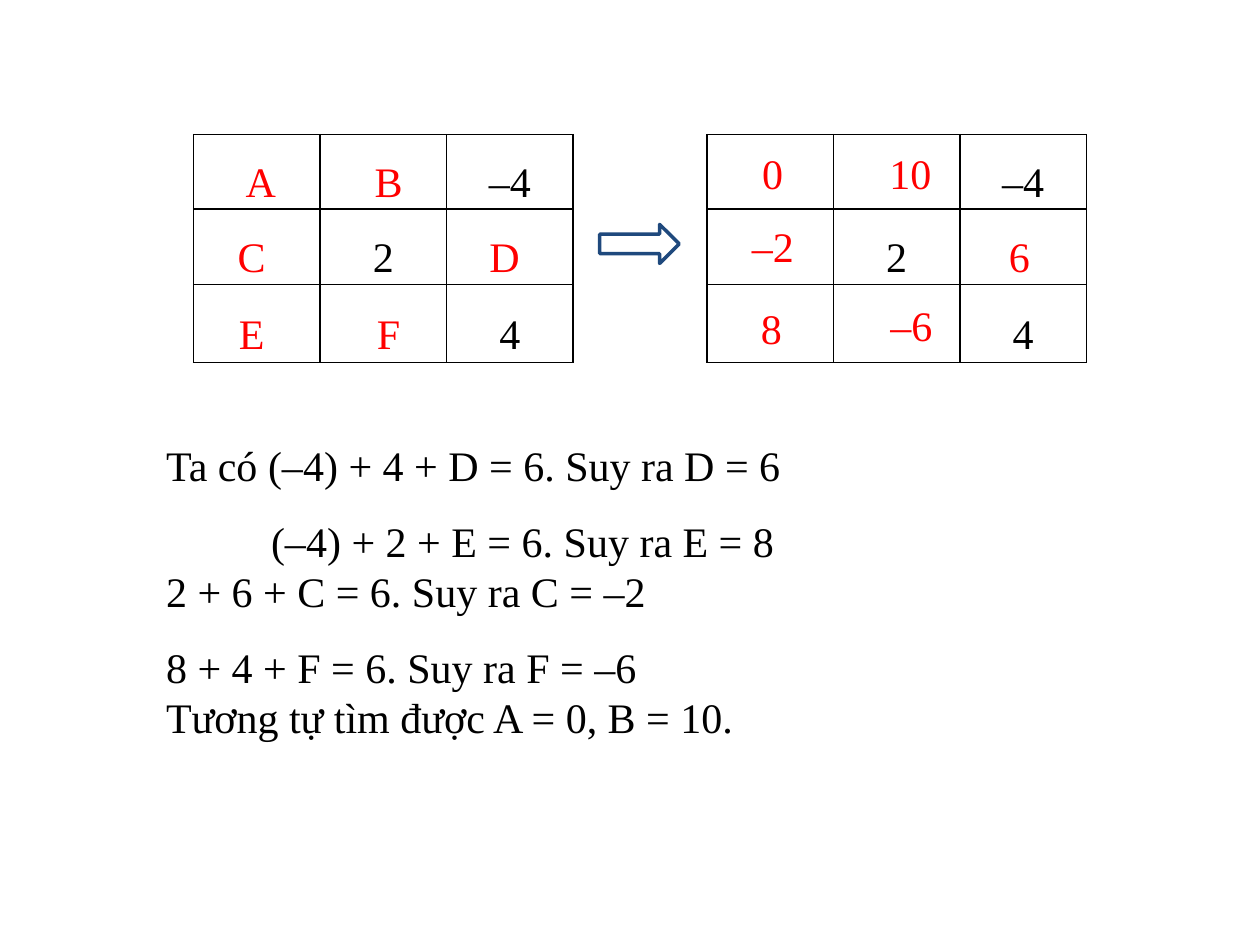
from dataclasses import dataclass
from lxml.etree import SubElement as Sub
from pptx import Presentation
from pptx.dml.color import RGBColor as Rgb
from pptx.enum.shapes import MSO_SHAPE as Shape
from pptx.enum.text import MSO_ANCHOR as Anchor, MSO_AUTO_SIZE as Auto, PP_ALIGN as Align
from pptx.oxml.ns import qn
from pptx.util import Pt


@dataclass
class Theme:
    face: str = "Times New Roman"
    size: float = 24
    ink: str = "000000"
    red: str = "FF0000"
    blue: str = "1F497D"


theme = Theme()


def style(par, text, color):
    par.text = text
    par.font.name = theme.face
    par.font.size = Pt(theme.size)
    par.font.color.rgb = Rgb.from_string(color)


def add_box(left, top, wide, high):
    box = slide.shapes.add_textbox(Pt(left), Pt(top), Pt(wide), Pt(high))
    box.text_frame.word_wrap = False
    box.text_frame.auto_size = Auto.SHAPE_TO_FIT_TEXT
    return box.text_frame


deck = Presentation()
deck.slide_width, deck.slide_height = Pt(720), Pt(540)
slide = deck.slides.add_slide(deck.slide_layouts[6])

grids = [
    (110.6, [[" A", " B", "–4"], ["C ", "2", "D "], ["E ", " F", "4"]]),
    (403.9, [["", "", "–4"], ["", "2", ""], ["", "", "4"]]),
]
highs = [42.5, 43.2, 44.6]
wide = 72.3
for left, rows in grids:
    frame = slide.shapes.add_table(3, 3, Pt(left), Pt(77), Pt(3 * wide), Pt(sum(highs)))
    table = frame.table
    table.first_row = table.horz_banding = False
    for col in table.columns:
        col.width = Pt(wide)
    for r, row in enumerate(rows):
        table.rows[r].height = Pt(highs[r])
        for c, text in enumerate(row):
            cell = table.cell(r, c)
            cell.margin_left = cell.margin_right = Pt(5)
            cell.margin_top = cell.margin_bottom = 0
            cell.vertical_anchor = Anchor.MIDDLE
            par = cell.text_frame.paragraphs[0]
            par.alignment = Align.CENTER
            par.line_spacing = 1.5
            style(par, text, theme.red if text.strip().isalpha() else theme.ink)
            props = cell._tc.get_or_add_tcPr()
            for side in ("a:lnL", "a:lnR", "a:lnT", "a:lnB"):
                line = Sub(props, qn(side), w=str(Pt(1)))
                Sub(Sub(line, qn("a:solidFill")), qn("a:srgbClr"), val=theme.ink)
            cell.fill.background()

arrow = slide.shapes.add_shape(Shape.RIGHT_ARROW, Pt(342.7), Pt(128.2), Pt(45.4), Pt(22.3))
arrow.shadow.inherit = False
arrow.fill.background()
arrow.line.color.rgb = Rgb.from_string(theme.blue)
arrow.line.width = Pt(2)

steps = [
    ("Ta có (–4) + 4 + D = 6. Suy ra D = 6", 1, 0),
    ("(–4) + 2 + E = 6. Suy ra E = 8", 1.5, 60),
    ("2 + 6 + C = 6. Suy ra C = –2", 1, 0),
    ("8 + 4 + F = 6. Suy ra F = –6", 1.5, 0),
    ("Tương tự tìm được A = 0, B = 10.", 1, 0),
]
proof = add_box(87.8, 247.7, 368.6, 211)
for i, (text, space, indent) in enumerate(steps):
    par = proof.add_paragraph() if i else proof.paragraphs[0]
    style(par, text, theme.ink)
    par.line_spacing = space
    if indent:
        par._p.get_or_add_pPr().set("marL", str(Pt(indent)))
proof.paragraphs[-1].alignment = Align.JUSTIFY

finds = [
    ("6", 569.5, 128.2),
    ("–6", 501.8, 167.8),
    ("10", 501.1, 80.6),
    ("0", 428.4, 80.6),
    ("–2", 422.6, 122.4),
    ("8", 427.7, 169.2),
]
for text, left, top in finds:
    box = add_box(left, top, 26.6 if len(text) == 1 else 38.9, 36)
    style(box.paragraphs[0], text, theme.red)

deck.save("out.pptx")
